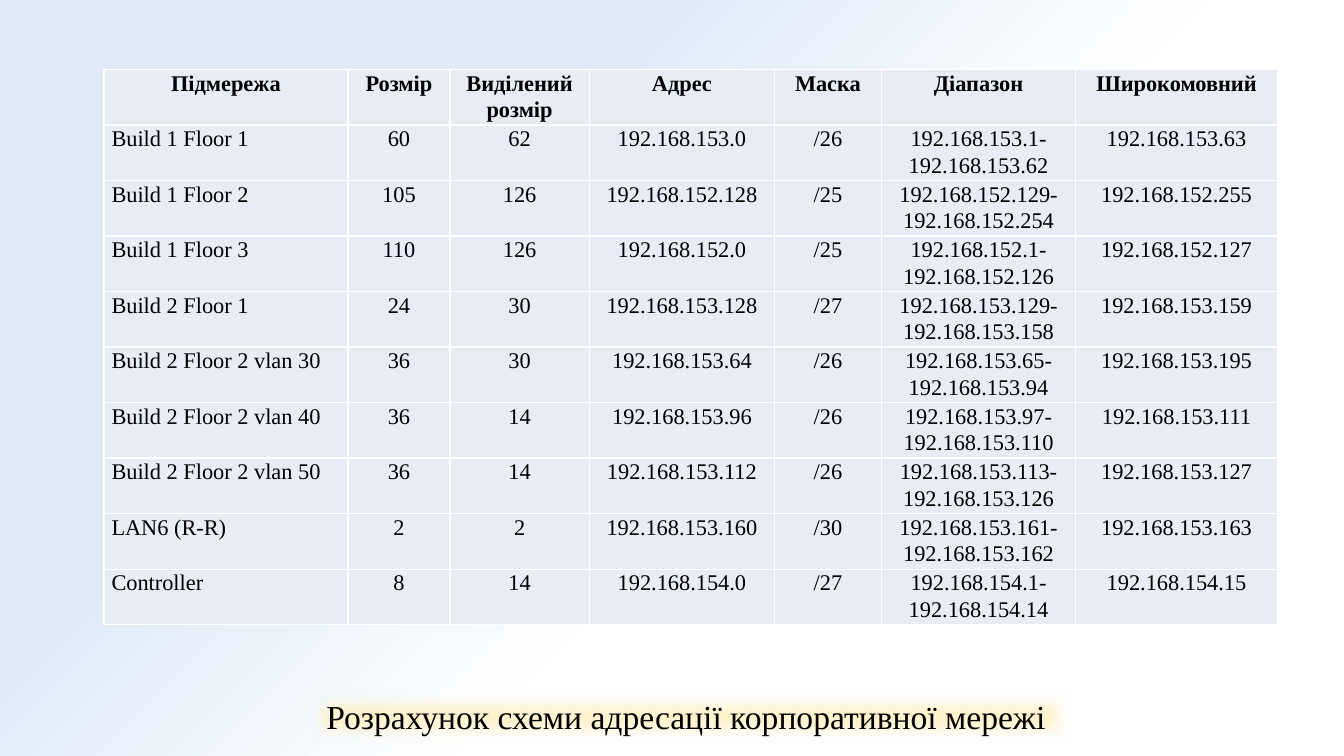
from lxml.etree import SubElement
from pptx import Presentation
from pptx.dml.color import RGBColor
from pptx.enum.text import MSO_ANCHOR, PP_ALIGN
from pptx.oxml import parse_xml
from pptx.oxml.ns import nsdecls, qn
from pptx.util import Cm, Pt

HEADERS = ("Підмережа", "Розмір", "Виділений розмір", "Адрес", "Маска", "Діапазон", "Широкомовний")
SUBNETS = [
    ("Build 1 Floor 1", "60", "62", "192.168.153.0", "/26", "192.168.153.1-192.168.153.62", "192.168.153.63"),
    ("Build 1 Floor 2", "105", "126", "192.168.152.128", "/25", "192.168.152.129-192.168.152.254", "192.168.152.255"),
    ("Build 1 Floor 3", "110", "126", "192.168.152.0", "/25", "192.168.152.1-192.168.152.126", "192.168.152.127"),
    ("Build 2 Floor 1", "24", "30", "192.168.153.128", "/27", "192.168.153.129-192.168.153.158", "192.168.153.159"),
    ("Build 2 Floor 2 vlan 30", "36", "30", "192.168.153.64", "/26", "192.168.153.65-192.168.153.94", "192.168.153.195"),
    ("Build 2 Floor 2 vlan 40", "36", "14", "192.168.153.96", "/26", "192.168.153.97-192.168.153.110", "192.168.153.111"),
    ("Build 2 Floor 2 vlan 50", "36", "14", "192.168.153.112", "/26", "192.168.153.113-192.168.153.126", "192.168.153.127"),
    ("LAN6 (R-R)", "2", "2", "192.168.153.160", "/30", "192.168.153.161-192.168.153.162", "192.168.153.163"),
    ("Controller", "8", "14", "192.168.154.0", "/27", "192.168.154.1-192.168.154.14", "192.168.154.15"),
]
CAPTION = "Розрахунок схеми адресації корпоративної мережі "

COLUMN_WIDTHS = [Cm(width) for width in (6.15, 2.57, 3.51, 4.67, 2.69, 4.9, 5.08)]
ROW_HEIGHT = Cm(1.4)
FONT = "Times New Roman"
BLACK = RGBColor(0x00, 0x00, 0x00)
WHITE = RGBColor(0xFF, 0xFF, 0xFF)
CELL_FILL = RGBColor(0xE9, 0xEB, 0xF5)
CAPTION_FILL = RGBColor(0xFF, 0xF2, 0xCC)
PALE_BLUE = RGBColor(0xDE, 0xEB, 0xF7)
GRADIENT_STOPS = [(13, WHITE), (41, WHITE), (68, PALE_BLUE), (81, PALE_BLUE), (99, PALE_BLUE)]

CELL_FORMAT = {"margin_left": Cm(0.19), "margin_right": Cm(0.19), "margin_top": 0, "margin_bottom": 0,
               "vertical_anchor": MSO_ANCHOR.TOP}
CAPTION_FORMAT = {"left": Cm(7.82), "top": Cm(17.42), "width": Cm(19.15), "height": Cm(1.28)}


def apply_format(target, values):
    """Set every attribute named in values on target."""
    for name, value in values.items():
        setattr(target, name, value)


def format_font(font, size, bold=False):
    """Give a font the slide's typeface and black colour."""
    apply_format(font, {"name": FONT, "size": Pt(size), "bold": bold})
    font.color.rgb = BLACK


def paint_background(slide):
    """Fill the background with a gradient centred on the lower right corner."""
    stops = "".join(f'<a:gs pos="{position * 1000}"><a:srgbClr val="{color}"/></a:gs>'
                    for position, color in GRADIENT_STOPS)
    fill = slide.background.fill
    fill.solid()
    properties = slide.element.cSld.find(qn("p:bg")).find(qn("p:bgPr"))
    properties.replace(properties.find(qn("a:solidFill")), parse_xml(
        f'<a:gradFill {nsdecls("a")} rotWithShape="1"><a:gsLst>{stops}</a:gsLst>'
        '<a:path path="circle"><a:fillToRect l="100000" t="100000"/></a:path>'
        '<a:tileRect r="-100000" b="-100000"/></a:gradFill>'))


def outline_cell(cell):
    """Draw thin white borders on all sides of a cell."""
    properties = cell._tc.get_or_add_tcPr()
    for index, side in enumerate(("lnL", "lnR", "lnT", "lnB")):
        properties.insert(index, parse_xml(
            f'<a:{side} {nsdecls("a")} w="12700"><a:solidFill><a:srgbClr val="{WHITE}"/></a:solidFill></a:{side}>'))


def add_subnet_table(slide):
    """Add the table of subnets with its header row."""
    rows = [HEADERS, *SUBNETS]
    table = slide.shapes.add_table(len(rows), len(HEADERS), Cm(2.62), Cm(1.75),
                                   sum(COLUMN_WIDTHS), ROW_HEIGHT * len(rows)).table
    for column, width in zip(table.columns, COLUMN_WIDTHS):
        column.width = width
    for row_index, texts in enumerate(rows):
        table.rows[row_index].height = ROW_HEIGHT
        for column_index, text in enumerate(texts):
            cell = table.cell(row_index, column_index)
            apply_format(cell, CELL_FORMAT)
            cell.fill.solid()
            cell.fill.fore_color.rgb = CELL_FILL
            outline_cell(cell)
            paragraph = cell.text_frame.paragraphs[0]
            is_header = row_index == 0
            centred = is_header or column_index > 0
            apply_format(paragraph, {"line_spacing": 1.07,
                                     "alignment": PP_ALIGN.CENTER if centred else PP_ALIGN.LEFT})
            run = paragraph.add_run()
            run.text = text
            format_font(run.font, 16, is_header)


def add_caption(slide):
    """Place the title under the table on a soft-edged band."""
    caption = slide.shapes.title
    apply_format(caption, CAPTION_FORMAT)
    caption.fill.solid()
    caption.fill.fore_color.rgb = CAPTION_FILL
    effects = SubElement(caption.element.spPr, qn("a:effectLst"))
    SubElement(effects, qn("a:softEdge"), rad="127000")
    apply_format(caption.text_frame, {"word_wrap": True, "vertical_anchor": MSO_ANCHOR.TOP})
    paragraph = caption.text_frame.paragraphs[0]
    paragraph.alignment = PP_ALIGN.CENTER
    run = paragraph.add_run()
    run.text = CAPTION
    format_font(run.font, 24)


def main():
    """Build and save the addressing slide."""
    presentation = Presentation()
    apply_format(presentation, {"slide_width": Cm(33.87), "slide_height": Cm(19.05)})
    slide = presentation.slides.add_slide(presentation.slide_layouts[5])
    paint_background(slide)
    add_subnet_table(slide)
    add_caption(slide)
    presentation.save("out.pptx")


if __name__ == "__main__":
    main()
